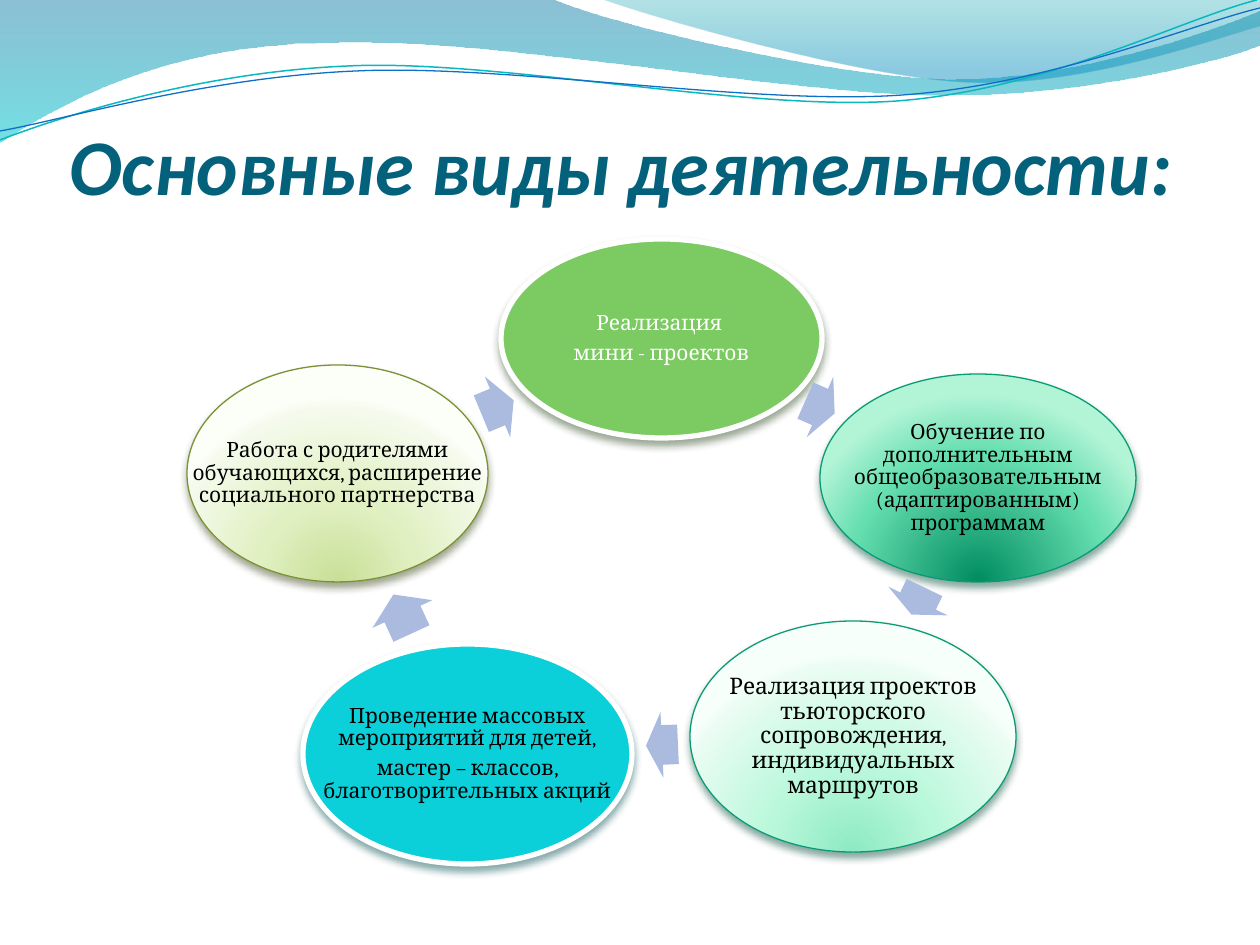
from lxml import etree
from pptx import Presentation
from pptx.dml.color import RGBColor
from pptx.enum.shapes import MSO_SHAPE
from pptx.enum.text import MSO_ANCHOR, MSO_AUTO_SIZE, PP_ALIGN
from pptx.oxml.ns import qn
from pptx.util import Emu, Pt

OVAL, ARROW = MSO_SHAPE.OVAL, MSO_SHAPE.RIGHT_ARROW
BOTTOM, MIDDLE = MSO_ANCHOR.BOTTOM, MSO_ANCHOR.MIDDLE
LEFT, CENTER = PP_ALIGN.LEFT, PP_ALIGN.CENTER
FIXED = MSO_AUTO_SIZE.NONE
WIDE, HIGH = 1260, 945


def px(n):
    return Emu(round(n * 914400 / 126))


def paint(color, code):
    color.rgb = RGBColor.from_string(code)


def add(parent, tag, **attrs):
    return etree.SubElement(parent, qn(tag), {k: str(v) for k, v in attrs.items()})


def shade(shape, stops, radial):
    shape.fill.gradient()
    grad = shape._element.spPr.find(qn("a:gradFill"))
    for child in list(grad):
        grad.remove(child)
    group = add(grad, "a:gsLst")
    for pos, code, alpha in stops:
        stop = add(group, "a:gs", pos=pos * 1000)
        color = add(stop, "a:srgbClr", val=code)
        if alpha < 100:
            add(color, "a:alpha", val=alpha * 1000)
    if radial:
        ring = add(grad, "a:path", path="circle")
        add(ring, "a:fillToRect", l=50000, t=130000, r=50000, b=-30000)
    else:
        add(grad, "a:lin", ang=5400000, scaled=0)


def drop(shape, code):
    effects = shape._element.spPr.find(qn("a:effectLst"))
    cast = add(effects, "a:outerShdw", blurRad=Pt(4.5), dist=Pt(3),
               dir=5400000, rotWithShape=0)
    color = add(cast, "a:srgbClr", val=code)
    add(color, "a:alpha", val=48000)


def bend(shape, parts):
    steps = iter(list(shape._element.spPr.iter(qn("a:lnTo"))))
    for part in parts:
        group = [next(steps) for _ in part]
        if len(group) == 3:
            curve = etree.Element(qn("a:cubicBezTo"))
            group[0].addprevious(curve)
            for step in group:
                curve.append(step[0])
                step.getparent().remove(step)


def wave(slide, box, start, parts, stops=None, line=None, width=0):
    left, top = box
    points = [(px(x), px(y)) for part in parts for x, y in part]
    pen = slide.shapes.build_freeform(px(start[0]), px(start[1]), scale=1.0)
    pen.add_line_segments(points, close=bool(stops))
    shape = pen.convert_to_shape(px(left), px(top))
    bend(shape, parts)
    shape.shadow.inherit = False
    if stops:
        shade(shape, stops, False)
        shape.line.fill.background()
    else:
        shape.fill.background()
        paint(shape.line.color, line)
        shape.line.width = Pt(width)


def write(frame, lines, size, font, code, align):
    for i, line in enumerate(lines):
        para = frame.paragraphs[0] if i == 0 else frame.add_paragraph()
        para.alignment = align
        run = para.add_run()
        run.text = line
        run.font.size = Pt(size)
        run.font.name = font
        paint(run.font.color, code)


def setup(frame, anchor, pad):
    frame.word_wrap = True
    frame.auto_size = FIXED
    frame.vertical_anchor = anchor
    frame.margin_left = frame.margin_right = px(pad)
    frame.margin_top = frame.margin_bottom = px(pad)


def head(slide, box, text):
    title = slide.shapes.title
    title.left, title.top, title.width, title.height = map(px, box)
    frame = title.text_frame
    setup(frame, BOTTOM, 0)
    frame.margin_bottom = px(93)
    write(frame, [text], 45, "Calibri", "04617B", LEFT)
    font = frame.paragraphs[0].runs[0].font
    font.bold = font.italic = True


def node(slide, box, lines, fill, edge, width, dark, ink="000000", size=12):
    place = [px(n) for n in box]
    oval = slide.shapes.add_shape(OVAL, *place)
    oval.shadow.inherit = False
    if isinstance(fill, str):
        oval.fill.solid()
        paint(oval.fill.fore_color, fill)
    else:
        shade(oval, [(pos, code, 100) for pos, code in fill], True)
    paint(oval.line.color, edge)
    oval.line.width = Pt(width)
    drop(oval, dark)
    frame = slide.shapes.add_textbox(*place).text_frame
    setup(frame, MIDDLE, 2)
    write(frame, lines, size, "Cambria", ink, CENTER)
    for para in frame.paragraphs:
        para.line_spacing = 0.9
        para.space_after = Pt(size * 0.35)


def arrow(slide, box, turn):
    shape = slide.shapes.add_shape(ARROW, *[px(n) for n in box])
    shape.shadow.inherit = False
    shape.adjustments[0], shape.adjustments[1] = 0.6, 0.5
    shape.rotation = turn
    shape.fill.solid()
    paint(shape.fill.fore_color, "ABBBDF")
    shape.line.fill.background()


def waves(slide, box):
    wave(slide, box, (0, 0), [
        [(554, 0)],
        [(600, 21), (837, 79), (955, 79)],
        [(1074, 79), (1207, 33), (1260, 11)],
        [(1260, 45)],
        [(1239, 55), (1096, 96), (940, 95)],
        [(784, 95), (481, 35), (324, 43)],
        [(163, 45), (58, 105), (0, 142)],
    ], stops=[(0, "0074A1", 45), (100, "00C6CF", 55)])
    wave(slide, box, (604, 0), [
        [(641, 14), (859, 78), (969, 82)],
        [(1079, 87), (1211, 40), (1260, 26)],
        [(1260, 0)],
    ], stops=[(0, "00A1A9", 30), (80, "008BBF", 45)])
    wave(slide, box, (0, 140), [
        [(60, 117), (199, 72), (349, 66)],
        [(498, 59), (747, 112), (898, 101)],
        [(1050, 89), (1182, 19), (1257, 0)],
    ], line="0AB8BF", width=0.85)
    wave(slide, box, (0, 131), [
        [(59, 121), (207, 77), (357, 71)],
        [(508, 64), (752, 106), (903, 95)],
        [(1053, 84), (1186, 26), (1260, 8)],
    ], line="0F6FC6", width=0.75)


def cycle(slide, box):
    left, top = box
    nodes = [
        ((315, 0, 321, 199), ["Реализация ", "мини - проектов"],
         "7CCA62", "FFFFFF", 3, "2B4821", "FFFFFF"),
        ((634, 135, 316, 208),
         ["Обучение по дополнительным общеобразовательным (адаптированным) программам"],
         [(0, "008C60"), (68, "65DEB0"), (100, "B2F4D6")], "0A9B74", 0.75, "044A37"),
        ((504, 382, 326, 231),
         ["Реализация проектов тьюторского сопровождения, индивидуальных маршрутов"],
         [(0, "8DEAC2"), (43, "BAF8DB"), (93, "EAFCF3"), (100, "F7FFFB")],
         "0A9B74", 0.75, "044A37", "000000", 13),
        ((117, 405, 329, 220),
         ["Проведение массовых мероприятий для детей,",
          "мастер – классов, благотворительных акций"],
         "0BD0D9", "FFFFFF", 3, "024B4E"),
        ((1, 126, 301, 217),
         ["Работа с родителями обучающихся, расширение социального партнерства"],
         [(0, "C9DF97"), (43, "E0F0C1"), (93, "F5FAEC"), (100, "FCFEF8")],
         "7B9135", 0.75, "3A4519"),
    ]
    arrows = [
        ((618, 135, 32, 66), 23.7),
        ((717, 329, 30, 66), 115.8),
        ((460, 473, 32, 66), 177.4),
        ((195, 342, 43, 66), 245.2),
        ((294, 135, 35, 66), 337.4),
    ]
    for (spot, *look), (place, turn) in zip(nodes, arrows):
        x, y, w, h = spot
        node(slide, (left + x, top + y, w, h), *look)
        x, y, w, h = place
        arrow(slide, (left + x, top + y, w, h), turn)


def main():
    deck = Presentation()
    deck.slide_width, deck.slide_height = px(WIDE), px(HIGH)
    slide = deck.slides.add_slide(deck.slide_layouts[5])
    waves(slide, (0, 0))
    head(slide, (69, 118, 1138, 186), "Основные виды деятельности:")
    cycle(slide, (186, 239))
    deck.save("out.pptx")


if __name__ == "__main__":
    main()
